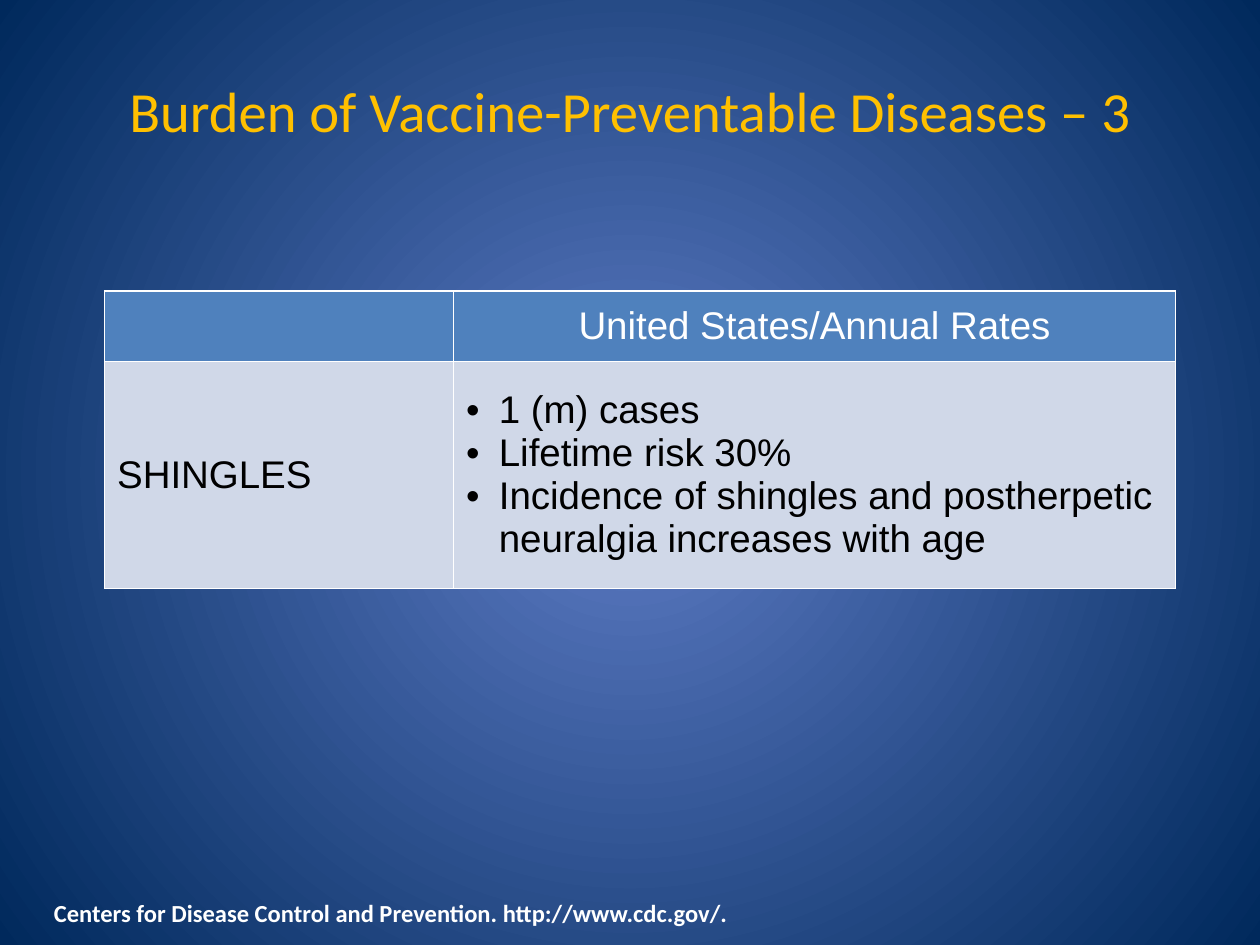
from lxml import etree
from pptx import Presentation
from pptx.dml.color import RGBColor
from pptx.enum.text import MSO_ANCHOR, MSO_AUTO_SIZE, PP_ALIGN
from pptx.oxml.ns import qn
from pptx.util import Inches, Pt

MIDDLE = MSO_ANCHOR.MIDDLE
CENTER, LEFT = PP_ALIGN.CENTER, PP_ALIGN.LEFT
NO_FIT = MSO_AUTO_SIZE.NONE
GROW = MSO_AUTO_SIZE.SHAPE_TO_FIT_TEXT

COLORS = {
    "glow": "5E7CC5", "navy": "00295C", "gold": "FFC000",
    "head": "4F81BD", "body": "D0D8E8", "white": "FFFFFF", "black": "000000",
}


def color(name):
    return RGBColor.from_string(COLORS[name])


def style(para, font, size, tone, align=LEFT, bold=False):
    para.alignment = align
    for run in para.runs:
        run.font.name = font
        run.font.size = Pt(size)
        run.font.bold = bold
        run.font.color.rgb = color(tone)


prs = Presentation()
prs.slide_width, prs.slide_height = Inches(10), Inches(7.5)
slide = prs.slides.add_slide(prs.slide_layouts[5])

# Background: circular gradient from the centre
fill = slide.background.fill
fill.gradient()
for stop, name, pos in zip(fill.gradient_stops, ("glow", "navy"), (0, 1)):
    stop.color.rgb = color(name)
    stop.position = pos
grad = next(slide.element.iter(qn("a:gradFill")))
grad.remove(grad.find(qn("a:lin")))
ring = etree.SubElement(grad, qn("a:path"), path="circle")
etree.SubElement(ring, qn("a:fillToRect"), l="50000", t="50000", r="50000", b="50000")

# Title
title = slide.shapes.title
title.left, title.top = Inches(0.5), Inches(0.25)
title.width, title.height = Inches(9), Inches(1.25)
frame = title.text_frame
frame.text = "Burden of Vaccine-Preventable Diseases – 3"
frame.auto_size = NO_FIT
frame.vertical_anchor = MIDDLE
style(frame.paragraphs[0], "Calibri", 32.4, "gold", CENTER)

# Table
rows = [
    ["", "United States/Annual Rates"],
    ["SHINGLES", "1 (m) cases\nLifetime risk 30%\n"
     "Incidence of shingles and postherpetic neuralgia increases with age"],
]
table = slide.shapes.add_table(
    2, 2, Inches(0.83), Inches(2.31), Inches(8.5), Inches(2.36)).table
for col, width in zip(table.columns, (2.77, 5.73)):
    col.width = Inches(width)
for row, height in zip(table.rows, (0.56, 1.8)):
    row.height = Inches(height)

for r, texts in enumerate(rows):
    for c, text in enumerate(texts):
        cell = table.cell(r, c)
        cell.text_frame.text = text
        cell.vertical_anchor = MIDDLE
        props = cell._tc.get_or_add_tcPr()
        for side in ("lnL", "lnR", "lnT", "lnB"):
            line = etree.SubElement(props, qn(f"a:{side}"), w=str(Pt(1)))
            solid = etree.SubElement(line, qn("a:solidFill"))
            etree.SubElement(solid, qn("a:srgbClr"), val=COLORS["white"])
        cell.fill.solid()
        cell.fill.fore_color.rgb = color("body" if r else "head")
        for para in cell.text_frame.paragraphs:
            style(para, "Arial", 22, "black" if r else "white",
                  LEFT if r else CENTER)
            if r and c:
                indent = para._p.get_or_add_pPr()
                indent.set("marL", str(Inches(0.26)))
                indent.set("indent", str(Inches(-0.26)))
                etree.SubElement(indent, qn("a:buFont"), typeface="Arial")
                etree.SubElement(indent, qn("a:buChar"), char="•")

# Source line
note = slide.shapes.add_textbox(Inches(0.33), Inches(7.08), Inches(9), Inches(0.34))
frame = note.text_frame
frame.word_wrap = True
frame.auto_size = GROW
frame.text = "Centers for Disease Control and Prevention. http://www.cdc.gov/."
style(frame.paragraphs[0], "Calibri", 14, "white", bold=True)

prs.save("out.pptx")
